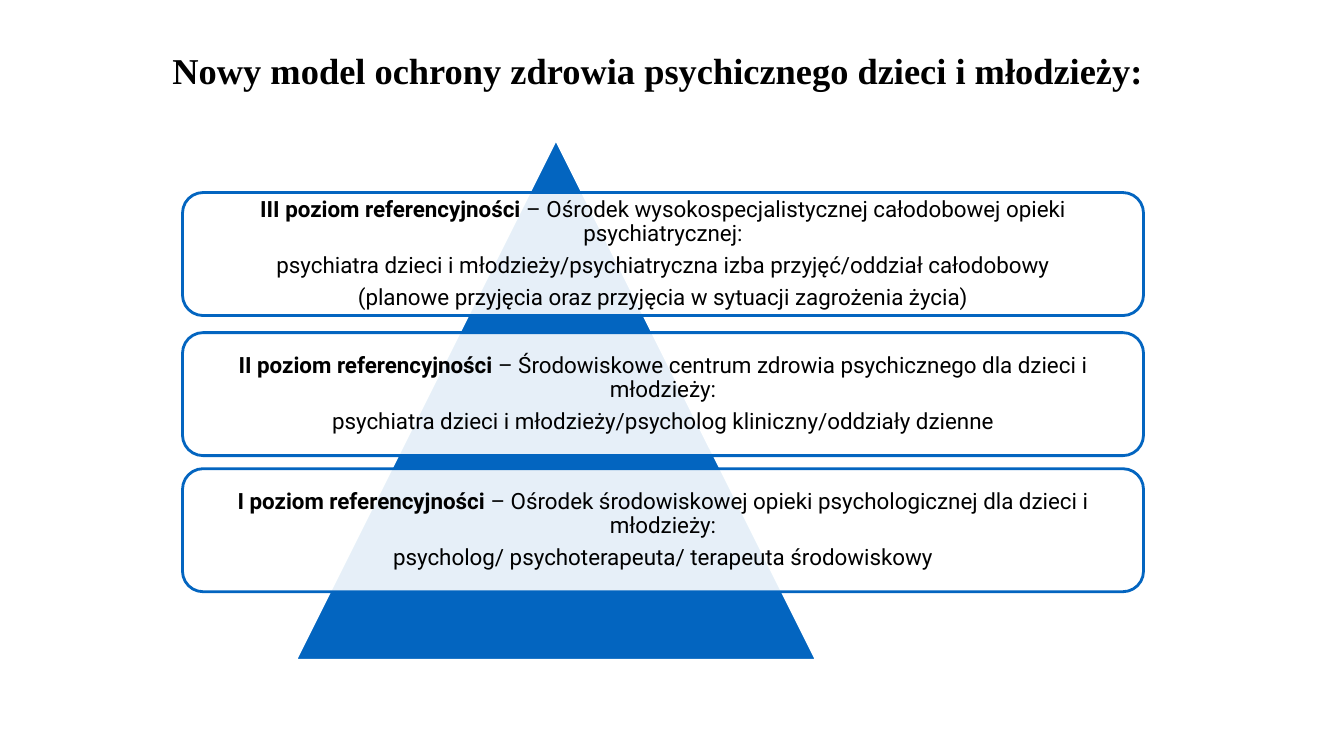
from lxml import etree
from pptx import Presentation
from pptx.dml.color import RGBColor
from pptx.enum.shapes import MSO_SHAPE
from pptx.enum.text import MSO_ANCHOR, PP_ALIGN
from pptx.oxml.ns import qn
from pptx.util import Inches, Pt

TRIANGLE, ROUNDED = MSO_SHAPE.ISOSCELES_TRIANGLE, MSO_SHAPE.ROUNDED_RECTANGLE
LEFT, CENTER = PP_ALIGN.LEFT, PP_ALIGN.CENTER
TOP, MIDDLE = MSO_ANCHOR.TOP, MSO_ANCHOR.MIDDLE
COLORS = {"blue": "0365C0", "white": "FFFFFF", "black": "000000"}

presentation = Presentation()
presentation.slide_width, presentation.slide_height = Inches(13.33), Inches(7.5)
slide = presentation.slides.add_slide(presentation.slide_layouts[6])

# Grid of 100 columns by 100 rows
COLUMN = presentation.slide_width / 100
ROW = presentation.slide_height / 100


def write(shape, paragraphs, font="Roboto", size=16, align=CENTER, anchor=MIDDLE,
          inset=0.07, line_spacing=0.9, space_after=5.6):
    """Each paragraph is a list of (text, bold) runs."""
    frame = shape.text_frame
    frame.word_wrap = True
    frame.vertical_anchor = anchor
    frame.margin_left = frame.margin_right = Inches(inset)
    frame.margin_top = frame.margin_bottom = Inches(inset)
    for index, runs in enumerate(paragraphs):
        paragraph = frame.add_paragraph() if index else frame.paragraphs[0]
        paragraph.alignment = align
        paragraph.line_spacing = line_spacing
        paragraph.space_after = Pt(space_after)
        for text, bold in runs:
            run = paragraph.add_run()
            run.text = text
            run.font.name, run.font.size, run.font.bold = font, Pt(size), bold
            run.font.color.rgb = RGBColor.from_string(COLORS["black"])


def add_outlined(kind, left, top, width, height, fill, line):
    shape = slide.shapes.add_shape(kind, int(left * COLUMN), int(top * ROW),
                                   int(width * COLUMN), int(height * ROW))
    shape.shadow.inherit = False
    shape.fill.solid()
    shape.fill.fore_color.rgb = RGBColor.from_string(COLORS[fill])
    shape.line.color.rgb = RGBColor.from_string(COLORS[line])
    shape.line.width = Pt(2)
    return shape


# Title
title = slide.shapes.add_textbox(int(12.83 * COLUMN), int(6.4 * ROW),
                                 int(78.32 * COLUMN), int(6 * ROW))
write(title, [[("Nowy model ochrony zdrowia psychicznego dzieci i młodzieży:", True)]],
      font="Times New Roman", size=26, align=LEFT, anchor=TOP,
      inset=0, line_spacing=1, space_after=0)

# Pyramid behind the levels
add_outlined(TRIANGLE, 21.98, 18.4, 38.78, 68.93, "blue", "white")

# Reference levels: top row, level, facility, further lines
levels = [
    (25.47, "III", "Ośrodek wysokospecjalistycznej całodobowej opieki psychiatrycznej:",
     ["psychiatra dzieci i młodzieży/psychiatryczna izba przyjęć/oddział całodobowy",
      "(planowe przyjęcia oraz przyjęcia w sytuacji zagrożenia życia)"]),
    (44, "II", "Środowiskowe centrum zdrowia psychicznego dla dzieci i młodzieży:",
     ["psychiatra dzieci i młodzieży/psycholog kliniczny/oddziały dzienne"]),
    (62, "I", "Ośrodek środowiskowej opieki psychologicznej dla dzieci i młodzieży:",
     ["psycholog/ psychoterapeuta/ terapeuta środowiskowy"]),
]
for top, level, facility, details in levels:
    box = add_outlined(ROUNDED, 13.58, top, 71.5, 16.27, "white", "blue")
    # 90 % opaque fill lets the pyramid show through
    color = box.fill._xPr.find(qn("a:solidFill"))[0]
    etree.SubElement(color, qn("a:alpha"), val="90000")
    heading = [(f"{level} poziom referencyjności ", True), (f"– {facility}", False)]
    write(box, [heading] + [[(detail, False)] for detail in details])

presentation.save("out.pptx")
